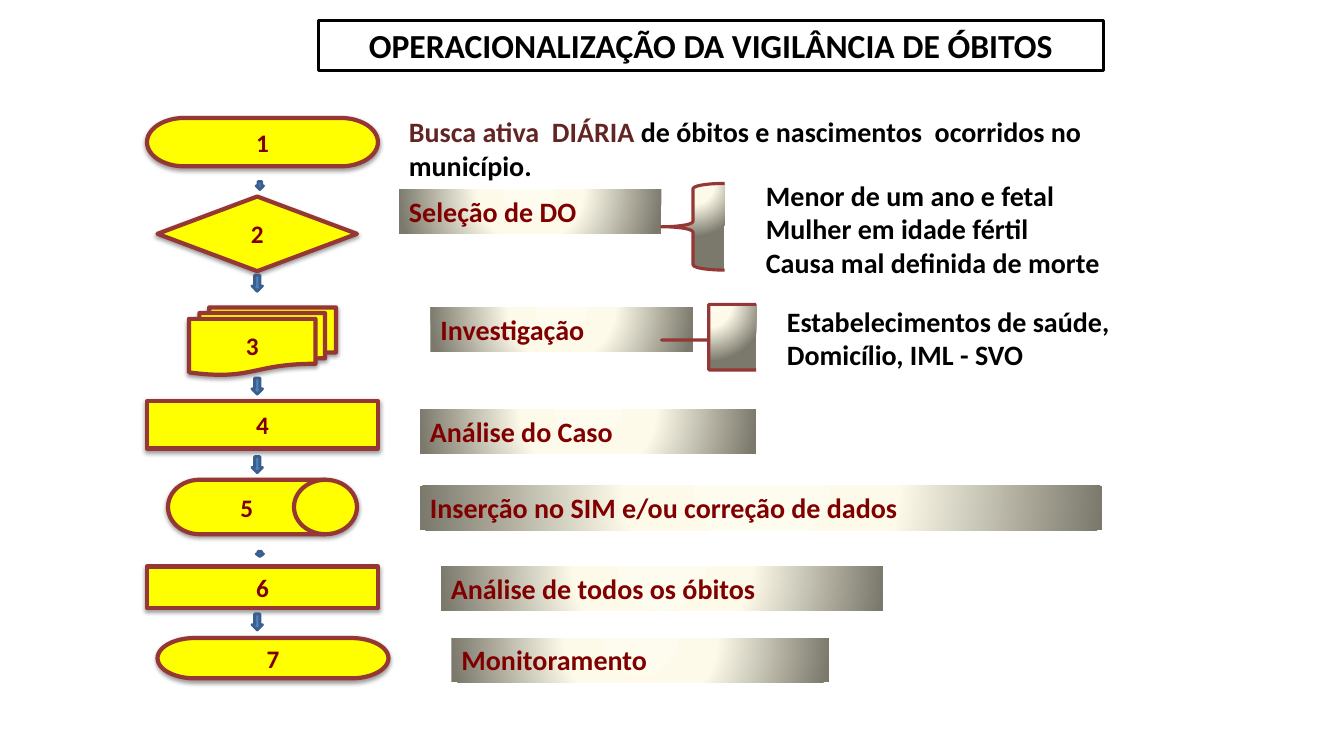
from lxml.etree import fromstring
from pptx import Presentation
from pptx.dml.color import RGBColor as RGB
from pptx.enum.shapes import MSO_SHAPE as Kind
from pptx.enum.text import MSO_ANCHOR as Anchor, MSO_AUTO_SIZE as Auto, PP_ALIGN as Align
from pptx.oxml.ns import qn
from pptx.util import Inches, Pt

WIDE, HIGH = Inches(13.33), Inches(7.5)
COLS, ROWS = 128, 75
NS = 'xmlns:a="http://schemas.openxmlformats.org/drawingml/2006/main"'
BLACK, WINE, RUST, BROWN = "000000", "800000", "953735", "632523"
YELLOW, BLUE, NAVY = "FFFF00", "4F81BD", "3A5F8C"
STOPS = [(0, "FEFCEE"), (40, "FDFAEA"), (100, "7B796B")]

# Flowchart steps: kind, column, row, columns wide, rows high
STEPS = [
    (Kind.FLOWCHART_TERMINATOR, 14, 11.7, 22, 4.8),
    (Kind.FLOWCHART_DECISION, 15, 19.5, 19, 7.4),
    (Kind.FLOWCHART_MULTIDOCUMENT, 18, 30.5, 14, 6.7),
    (Kind.FLOWCHART_PROCESS, 14, 39.8, 22, 4.7),
    (Kind.FLOWCHART_DIRECT_ACCESS_STORAGE, 16, 47.6, 18, 5.4),
    (Kind.FLOWCHART_PROCESS, 14, 56.2, 22, 4.1),
    (Kind.FLOWCHART_TERMINATOR, 15, 63.3, 22, 4),
]
# Arrows between steps: column, row, columns wide, rows high
ARROWS = [(24.4, 18, 0.7, 0.8), (24.4, 54.7, 0.7, 0.5)]
ARROWS += [(24, row, 1, 1.6) for row in (27.3, 37.5, 45.3, 60.9)]
# Step names: wording, column, row, columns wide
LABELS = [
    ("Seleção de DO", 38, 18.8, 25),
    ("Investigação", 41, 30.5, 25),
    ("Análise do Caso", 40, 40.6, 32),
    ("Inserção no SIM e/ou correção de dados", 40, 48.2, 65),
    ("Análise de todos os óbitos", 42, 56.2, 42.1),
    ("Monitoramento", 43, 63.3, 36),
]
# Braces: box on the grid, adjustments
BRACES = [((63, 18.2, 6, 8.6), ()), ((63, 30.2, 9, 6.5), (0, 0.543))]
# Plain notes: box on the grid, paragraphs of (wording, colour) runs
NOTES = [
    ((38, 10.9, 76.5, 7.7), [[
        ("Busca ativa  DIÁRIA ", BROWN),
        ("de óbitos e nascimentos  ocorridos no município.", BLACK)]]),
    ((72, 17.2, 37.5, 11.1), [
        [("Menor de um ano e fetal", BLACK)],
        [("Mulher em idade fértil", BLACK)],
        [("Causa mal definida de morte", BLACK)]]),
    ((74, 29.7, 39.4, 7.7), [
        [("Estabelecimentos de saúde, Domicílio, IML - SVO", BLACK)]]),
]


def color(code):
    return RGB.from_string(code)


def place(col, row, wide, high):
    x, y = WIDE / COLS, HIGH / ROWS
    return [round(v) for v in (col * x, row * y, wide * x, high * y)]


def assign(item, values):
    for name, value in values.items():
        setattr(item, name, value)


def write(shape, paras, size, align=Align.LEFT, anchor=Anchor.TOP, grow=True):
    frame = shape.text_frame
    assign(frame, {"word_wrap": True, "vertical_anchor": anchor,
                   "auto_size": Auto.SHAPE_TO_FIT_TEXT if grow else Auto.NONE})
    for i, runs in enumerate(paras):
        para = frame.add_paragraph() if i else frame.paragraphs[0]
        para.alignment = align
        for words, tint in runs:
            run = para.add_run()
            run.text = words
            assign(run.font, {"name": "Calibri", "size": Pt(size), "bold": True})
            run.font.color.rgb = color(tint)


def draw(slide, kind, box, fill=None, line=None, width=2):
    shape = slide.shapes.add_shape(kind, *place(*box))
    shape.shadow.inherit = False
    if fill:
        shape.fill.solid()
        shape.fill.fore_color.rgb = color(fill)
    if line:
        shape.line.color.rgb = color(line)
        shape.line.width = Pt(width)
    else:
        shape.line.fill.background()
    return shape


def shade(shape):
    # Radial gradient centred far above the shape
    stops = "".join(f'<a:gs pos="{at * 1000}"><a:srgbClr val="{code}"/></a:gs>'
                    for at, code in STOPS)
    geom = shape.element.spPr.find(qn("a:prstGeom"))
    geom.addnext(fromstring(
        f'<a:gradFill {NS} rotWithShape="1"><a:gsLst>{stops}</a:gsLst>'
        '<a:path path="circle"><a:fillToRect l="50000" t="-80000" r="50000" '
        'b="180000"/></a:path></a:gradFill>'))


def lift(shape):
    # Soft shadow below the shape
    shape.element.spPr.find(qn("a:effectLst")).append(fromstring(
        f'<a:outerShdw {NS} blurRad="40000" dist="20000" dir="5400000" '
        'rotWithShape="0"><a:srgbClr val="000000"><a:alpha val="38000"/>'
        '</a:srgbClr></a:outerShdw>'))


def step(slide, num, kind, *box):
    shape = draw(slide, kind, box, YELLOW, RUST, 3)
    lift(shape)
    write(shape, [[(str(num), WINE)]], 18, Align.CENTER, Anchor.MIDDLE, False)


def label(slide, words, col, row, wide):
    shape = draw(slide, Kind.RECTANGLE, (col, row, wide, 4.4))
    shade(shape)
    write(shape, [[(words, WINE)]], 20)


def brace(slide, box, bends):
    shape = draw(slide, Kind.LEFT_BRACE, box, line=RUST, width=2.25)
    for i, bend in enumerate(bends):
        shape.adjustments[i] = bend
    shade(shape)


def note(slide, box, paras):
    write(slide.shapes.add_textbox(*place(*box)), paras, 20)


def main():
    deck = Presentation()
    assign(deck, {"slide_width": WIDE, "slide_height": HIGH})
    slide = deck.slides.add_slide(deck.slide_layouts[6])
    # Title
    title = draw(slide, Kind.RECTANGLE, (30.3, 2, 74.8, 5), "FFFFFF", BLACK)
    write(title, [[("OPERACIONALIZAÇÃO DA VIGILÂNCIA DE ÓBITOS", BLACK)]],
          24, Align.CENTER)
    # Flowchart
    for num, item in enumerate(STEPS, 1):
        step(slide, num, *item)
    for box in ARROWS:
        draw(slide, Kind.DOWN_ARROW, box, BLUE, NAVY)
    # Names and details of the steps
    for item in LABELS:
        label(slide, *item)
    for item in BRACES:
        brace(slide, *item)
    for item in NOTES:
        note(slide, *item)
    deck.save("out.pptx")


if __name__ == "__main__":
    main()
